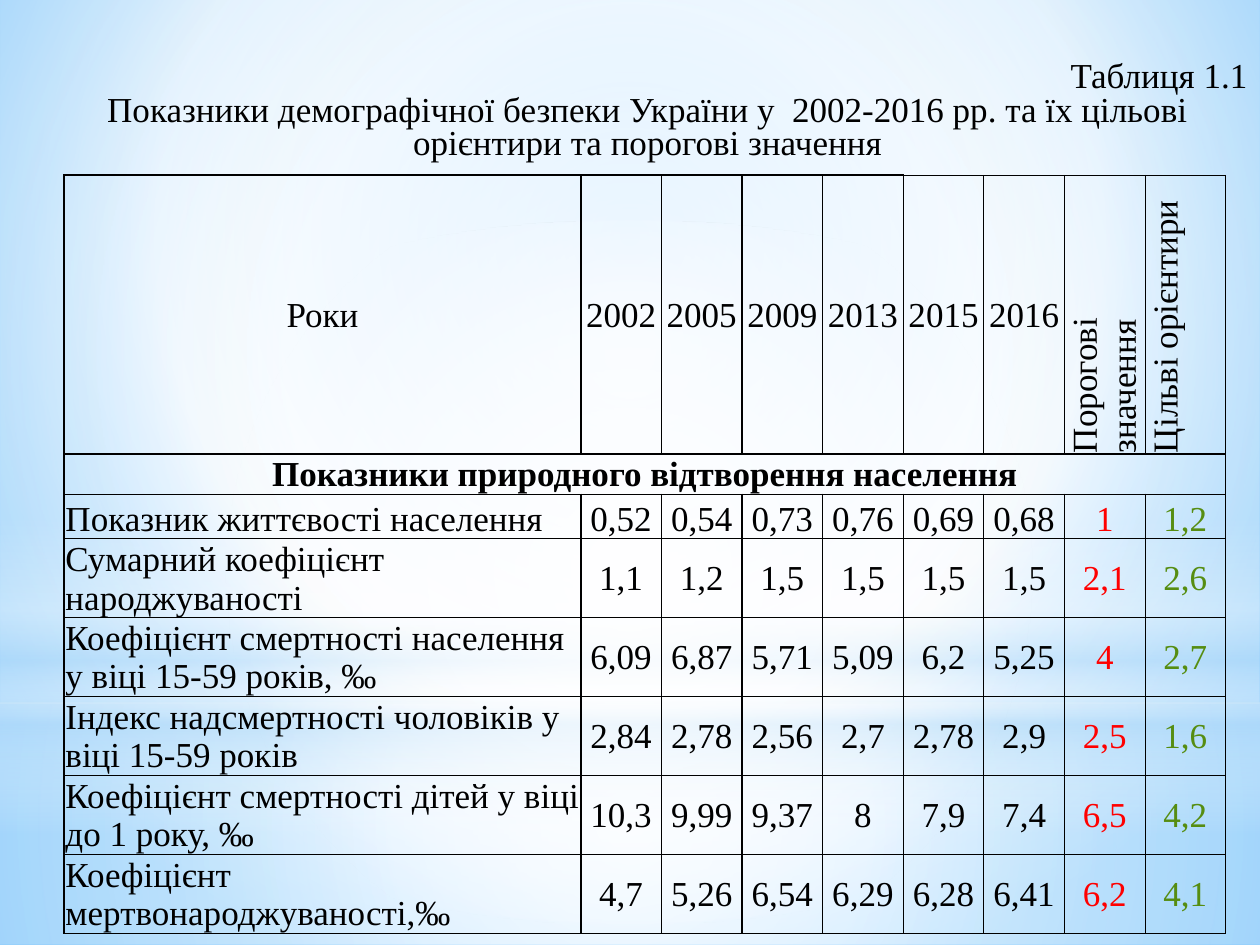
import pptx
import pptx.util
import pptx.dml.color
import pptx.enum.shapes
import pptx.enum.text
import pptx.oxml
import pptx.oxml.ns

Inches = pptx.util.Inches
ALIGN = pptx.enum.text.PP_ALIGN
ANCHOR = pptx.enum.text.MSO_ANCHOR
SHAPE = pptx.enum.shapes.MSO_SHAPE

BLACK, RED, GREEN = "000000", "FF0000", "568D11"
FONT = {"name": "Times New Roman", "size": pptx.util.Pt(20), "bold": False}
CELL = {"margin_left": Inches(0.01), "margin_top": Inches(0.01),
        "margin_right": Inches(0.01), "margin_bottom": 0}
CENTRE = (50, 50, 50, 50)

COLUMN_WIDTHS = [4.1] + [0.64] * 8
ROW_HEIGHTS = [1.34, 0.32] + [0.35] * 4 + [0.33] * 2
THRESHOLD_COLUMN, TARGET_COLUMN = 7, 8
FIRST_THIN_COLUMN = 5
SECTION_ROW = 1
ROWS = [
    ["Роки", "2002", "2005", "2009", "2013", "2015", "2016",
     "Порогові значення", "Цільві орієнтири"],
    ["Показники природного відтворення населення"],
    ["Показник життєвості населення",
     "0,52", "0,54", "0,73", "0,76", "0,69", "0,68", "1", "1,2"],
    ["Сумарний коефіцієнт народжуваності",
     "1,1", "1,2", "1,5", "1,5", "1,5", "1,5", "2,1", "2,6"],
    ["Коефіцієнт смертності населення у віці 15-59 років, ‰",
     "6,09", "6,87", "5,71", "5,09", "6,2", "5,25", "4", "2,7"],
    ["Індекс надсмертності чоловіків у віці 15-59 років",
     "2,84", "2,78", "2,56", "2,7", "2,78", "2,9", "2,5", "1,6"],
    ["Коефіцієнт смертності дітей у віці до 1 року, ‰",
     "10,3", "9,99", "9,37", "8", "7,9", "7,4", "6,5", "4,2"],
    ["Коефіцієнт мертвонароджуваності,‰",
     "4,7", "5,26", "6,54", "6,29", "6,28", "6,41", "6,2", "4,1"],
]

# Shape, place, gradient stops (position, colour, opacity), focus (None = linear)
BACKDROP = [
    (SHAPE.RECTANGLE, (0, 5.58, 10, 1.92),
     [(0, "FFFFFF", 91), (37, "FFFFFF", 76), (100, "B4DCFA", 79)], CENTRE),
    (SHAPE.RECTANGLE, (0, 0, 10, 5.58),
     [(0, "FFFFFF", 89), (48, "FFFFFF", 62), (100, "B4DCFA", 79)], CENTRE),
    (SHAPE.RECTANGLE, (0, 4.12, 10, 2.5),
     [(0, "FFFFFF", 0), (29, "FFFFFF", 30), (45, "B4DCFA", 40),
      (55, "FFFFFF", 26), (65, "B4DCFA", 60), (100, "FFFFFF", 0)], None),
    (SHAPE.OVAL, (0, 1.75, 10, 5.58),
     [(0, "FFFFFF", 100), (56, "FFFFFF", 0)], CENTRE),
]


def rgb(colour):
    return pptx.dml.color.RGBColor.from_string(colour)


def apply_format(target, values):
    for name, value in values.items():
        setattr(target, name, value)


def set_gradient(fill, element, stops, focus):
    """Fill with a circular gradient around focus, or a vertical one without it."""
    fill.gradient()
    stop_xml = "".join(
        f'<a:gs pos="{position * 1000}"><a:srgbClr val="{colour}">'
        f'<a:alpha val="{opacity * 1000}"/></a:srgbClr></a:gs>'
        for position, colour, opacity in stops)
    if focus:
        sides = " ".join(f'{side}="{value * 1000}"' for side, value in zip("ltrb", focus))
        direction = f'<a:path path="circle"><a:fillToRect {sides}/></a:path>'
    else:
        direction = '<a:lin ang="5400000" scaled="0"/>'
    gradient = pptx.oxml.parse_xml(
        f'<a:gradFill {pptx.oxml.ns.nsdecls("a")} rotWithShape="1">'
        f"<a:gsLst>{stop_xml}</a:gsLst>{direction}</a:gradFill>")
    previous = next(element.iter(pptx.oxml.ns.qn("a:gradFill")))
    previous.getparent().replace(previous, gradient)


def add_backdrop(slide):
    stops = [(0, "9ED5FF", 100), (60, "FFFFFF", 100), (100, "5BB9FF", 100)]
    set_gradient(slide.background.fill, slide.element, stops, (20, 10, 20, 60))
    for kind, place, stops, focus in BACKDROP:
        shape = slide.shapes.add_shape(kind, *map(Inches, place))
        shape.shadow.inherit = False
        shape.line.fill.background()
        set_gradient(shape.fill, shape.element, stops, focus)


def write_paragraph(paragraph, text, alignment, colour=BLACK, **font_changes):
    paragraph.alignment = alignment
    run = paragraph.add_run()
    run.text = text
    apply_format(run.font, FONT | font_changes)
    run.font.color.rgb = rgb(colour)


def set_borders(cell, widths):
    """Draw the left, right, top and bottom borders with widths in points."""
    properties = cell._tc.get_or_add_tcPr()
    for side, width in zip("LRTB", widths):
        properties.append(pptx.oxml.parse_xml(
            f'<a:ln{side} {pptx.oxml.ns.nsdecls("a")} w="{pptx.util.Pt(width)}">'
            f'<a:solidFill><a:srgbClr val="{BLACK}"/></a:solidFill></a:ln{side}>'))


def border_widths(row, column):
    if column >= FIRST_THIN_COLUMN:
        return (0.5,) * 4
    thin_right = column == FIRST_THIN_COLUMN - 1 or row == SECTION_ROW
    return (1, 0.5 if thin_right else 1, 1, 1)


def format_cell(cell, row, column, text):
    is_vertical = row == 0 and column >= THRESHOLD_COLUMN
    is_label = row > SECTION_ROW and column == 0
    is_low = is_label or row in (SECTION_ROW, SECTION_ROW + 1)
    colours = {THRESHOLD_COLUMN: RED, TARGET_COLUMN: GREEN} if row else {}
    apply_format(cell, CELL)
    cell.vertical_anchor = ANCHOR.BOTTOM if is_low else ANCHOR.MIDDLE
    if is_vertical:
        cell._tc.get_or_add_tcPr().set("vert", "vert270")
    set_borders(cell, border_widths(row, column))
    cell.fill.background()
    write_paragraph(cell.text_frame.paragraphs[0], text,
                    ALIGN.LEFT if is_label or is_vertical else ALIGN.CENTER,
                    colours.get(column, BLACK), bold=row == SECTION_ROW)


def add_indicator_table(slide):
    frame = slide.shapes.add_table(len(ROWS), len(COLUMN_WIDTHS), Inches(0.51),
                                   Inches(1.39), Inches(9.21), Inches(5.4))
    table = frame.table
    apply_format(table, {"first_row": False, "horz_banding": False})
    for column, width in zip(table.columns, COLUMN_WIDTHS):
        column.width = Inches(width)
    for row, height in zip(table.rows, ROW_HEIGHTS):
        row.height = Inches(height)
    frame.height = Inches(5.4)
    table.cell(SECTION_ROW, 0).merge(table.cell(SECTION_ROW, len(COLUMN_WIDTHS) - 1))
    for row, texts in enumerate(ROWS):
        for column, text in enumerate(texts):
            format_cell(table.cell(row, column), row, column, text)


def add_title(slide):
    title = slide.shapes.title
    slide.shapes.element.append(title.element)  # bring in front of the backdrop
    apply_format(title, {"left": Inches(0.28), "top": Inches(0.44),
                         "width": Inches(9.72), "height": Inches(0.91)})
    frame = title.text_frame
    apply_format(frame, {"word_wrap": True, "vertical_anchor": ANCHOR.TOP,
                         "auto_size": pptx.enum.text.MSO_AUTO_SIZE.SHAPE_TO_FIT_TEXT})
    write_paragraph(frame.paragraphs[0], "Таблиця 1.1", ALIGN.RIGHT)
    write_paragraph(frame.add_paragraph(),
                    "Показники демографічної безпеки України у  2002-2016 рр. "
                    "та їх цільові орієнтири та порогові значення", ALIGN.CENTER)
    for paragraph in frame.paragraphs:
        paragraph.line_spacing = 0.8


def main():
    presentation = pptx.Presentation()
    apply_format(presentation, {"slide_width": Inches(10), "slide_height": Inches(7.5)})
    slide = presentation.slides.add_slide(presentation.slide_layouts.get_by_name("Title Only"))
    add_backdrop(slide)
    add_indicator_table(slide)
    add_title(slide)
    presentation.save("out.pptx")


if __name__ == "__main__":
    main()
